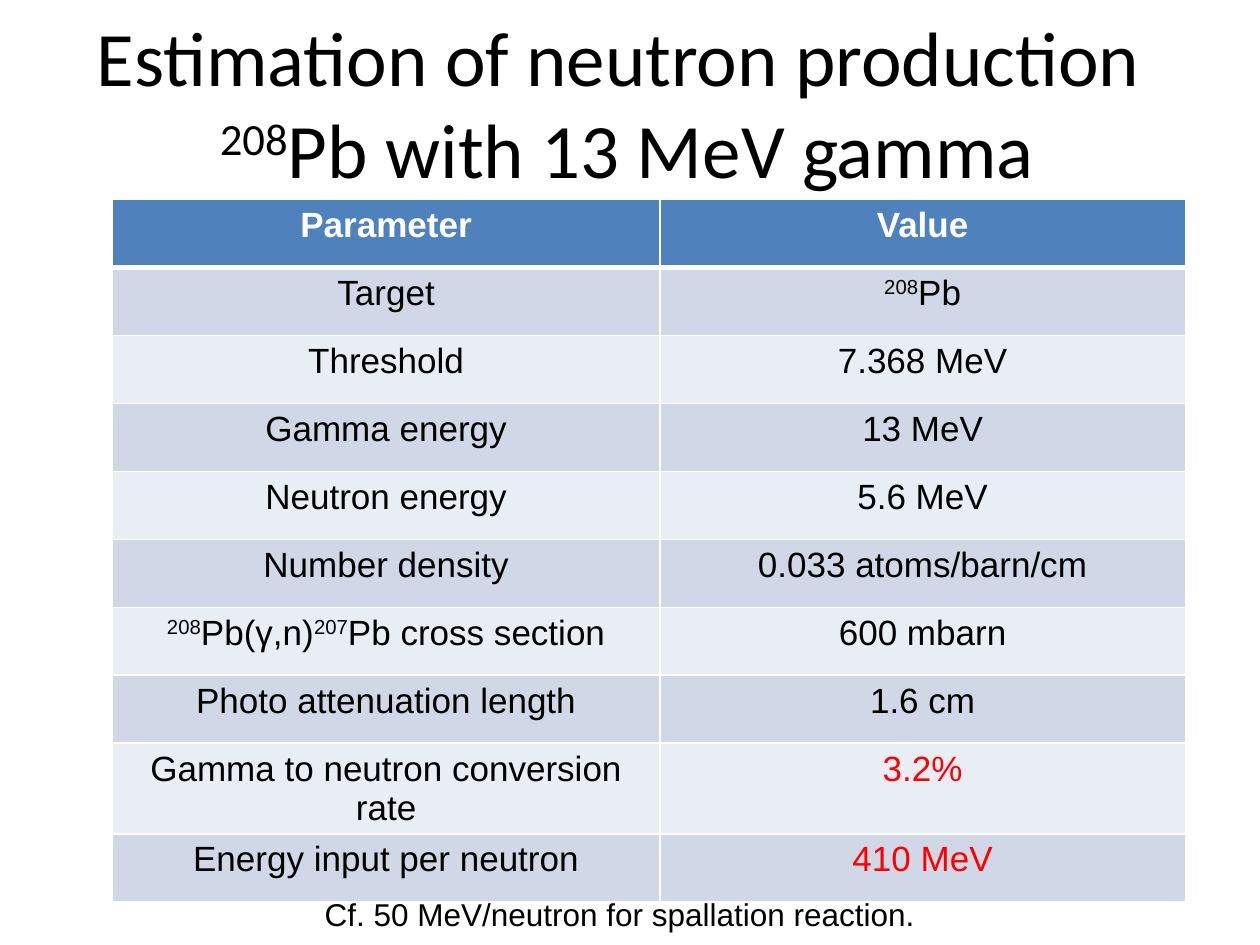
from lxml import etree
from pptx import Presentation
from pptx.dml.color import RGBColor
from pptx.enum.text import MSO_ANCHOR, MSO_AUTO_SIZE, PP_ALIGN
from pptx.oxml.ns import qn
from pptx.util import Pt

CENTER, LEFT = PP_ALIGN.CENTER, PP_ALIGN.LEFT
MIDDLE = MSO_ANCHOR.MIDDLE
NO_FIT = MSO_AUTO_SIZE.NONE
TITLE_ONLY = 5

COLORS = {
    "text": "000000",
    "light": "FFFFFF",
    "accent": "FF0000",
    "header": "4F81BD",
    "odd": "D0D8E8",
    "even": "E9EDF4",
}
TITLE = {"name": "Calibri", "size": Pt(44), "bold": False}
HEADER = {"name": "Arial", "size": Pt(20), "bold": True}
BODY = {"name": "Arial", "size": Pt(20), "bold": False}
NOTE = {"name": "Arial", "size": Pt(18), "bold": False}

TITLE_LINES = ["Estimation of neutron production ", "^208^Pb with 13 MeV gamma"]
ROWS = [
    ("Parameter", "Value"),
    ("Target", "^208^Pb"),
    ("Threshold", "7.368 MeV"),
    ("Gamma energy", "13 MeV"),
    ("Neutron energy", "5.6 MeV"),
    ("Number density", "0.033 atoms/barn/cm"),
    ("^208^Pb(γ,n)^207^Pb cross section", "600 mbarn"),
    ("Photo attenuation length", "1.6 cm"),
    ("Gamma to neutron conversion rate", "3.2%"),
    ("Energy input per neutron", "410 MeV"),
]
RESULTS = {"3.2%", "410 MeV"}
COL_SHARES = (0.51, 0.49)


def rgb(key):
    return RGBColor.from_string(COLORS[key])


def add_text(p, text, fmt, color, align=CENTER):
    p.alignment = align
    for i, part in enumerate(text.split("^")):
        if not part:
            continue
        r = p.add_run()
        r.text = part
        for name, value in fmt.items():
            setattr(r.font, name, value)
        r.font.color.rgb = rgb(color)
        if i % 2:
            r.font._element.set("baseline", "30000")


def add_borders(cell, widths):
    tcPr = cell._tc.get_or_add_tcPr()
    for side, width in widths.items():
        ln = etree.SubElement(tcPr, qn(f"a:ln{side}"), w=str(Pt(width)))
        fill = etree.SubElement(ln, qn("a:solidFill"))
        etree.SubElement(fill, qn("a:srgbClr"), val=COLORS["light"])


def add_title(s, box):
    sp = s.shapes.title
    sp.left, sp.top, sp.width, sp.height = map(Pt, box)
    tf = sp.text_frame
    tf.auto_size = NO_FIT
    tf.vertical_anchor = MIDDLE
    p = tf.paragraphs[0]
    for i, line in enumerate(TITLE_LINES):
        if i:
            p.add_line_break()
        add_text(p, line, TITLE, "text")


def add_parameters(s, box):
    width, height = box[2:]
    table = s.shapes.add_table(len(ROWS), len(COL_SHARES), *map(Pt, box)).table
    for col, share in zip(table.columns, COL_SHARES):
        col.width = Pt(width * share)
    for i, values in enumerate(ROWS):
        table.rows[i].height = Pt(height / len(ROWS))
        band = "header" if i == 0 else "odd" if i % 2 else "even"
        top, bottom = (3 if i == 1 else 1), (3 if i == 0 else 1)
        for j, value in enumerate(values):
            cell = table.cell(i, j)
            add_borders(cell, {"L": 1, "R": 1, "T": top, "B": bottom})
            cell.fill.solid()
            cell.fill.fore_color.rgb = rgb(band)
            color = "light" if i == 0 else "accent" if value in RESULTS else "text"
            add_text(cell.text_frame.paragraphs[0], value, BODY if i else HEADER, color)


def add_note(s, box):
    tf = s.shapes.add_textbox(*map(Pt, box)).text_frame
    tf.word_wrap = True
    add_text(tf.paragraphs[0], "Cf. 50 MeV/neutron for spallation reaction.", NOTE, "text", LEFT)


def main():
    prs = Presentation()
    prs.slide_width, prs.slide_height = Pt(720), Pt(540)
    s = prs.slides.add_slide(prs.slide_layouts[TITLE_ONLY])
    add_title(s, (34.5, 27.5, 648, 61))
    add_parameters(s, (64.3, 114, 613.2, 388.4))
    add_note(s, (178.5, 507.6, 380, 29))
    prs.save("out.pptx")


if __name__ == "__main__":
    main()
